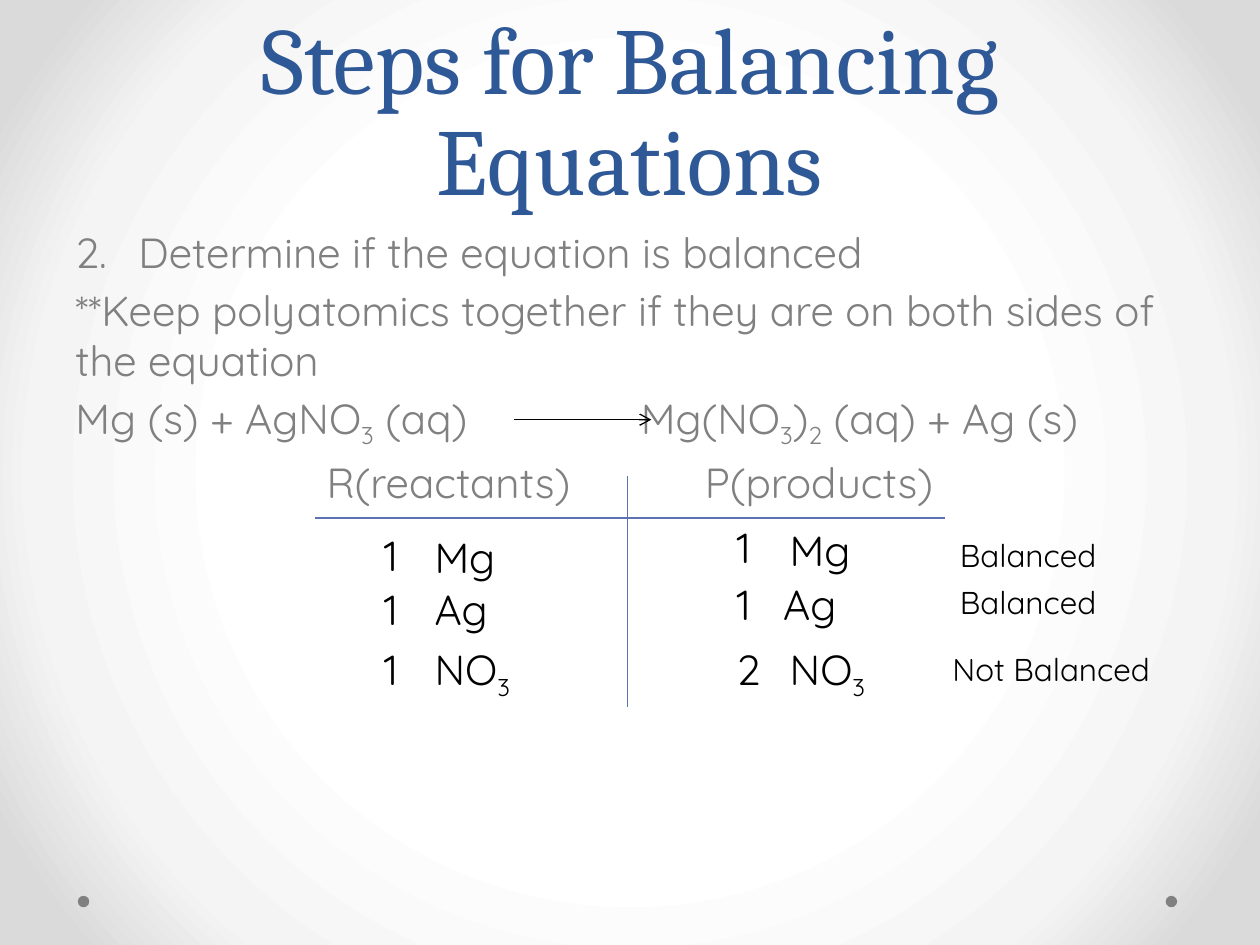
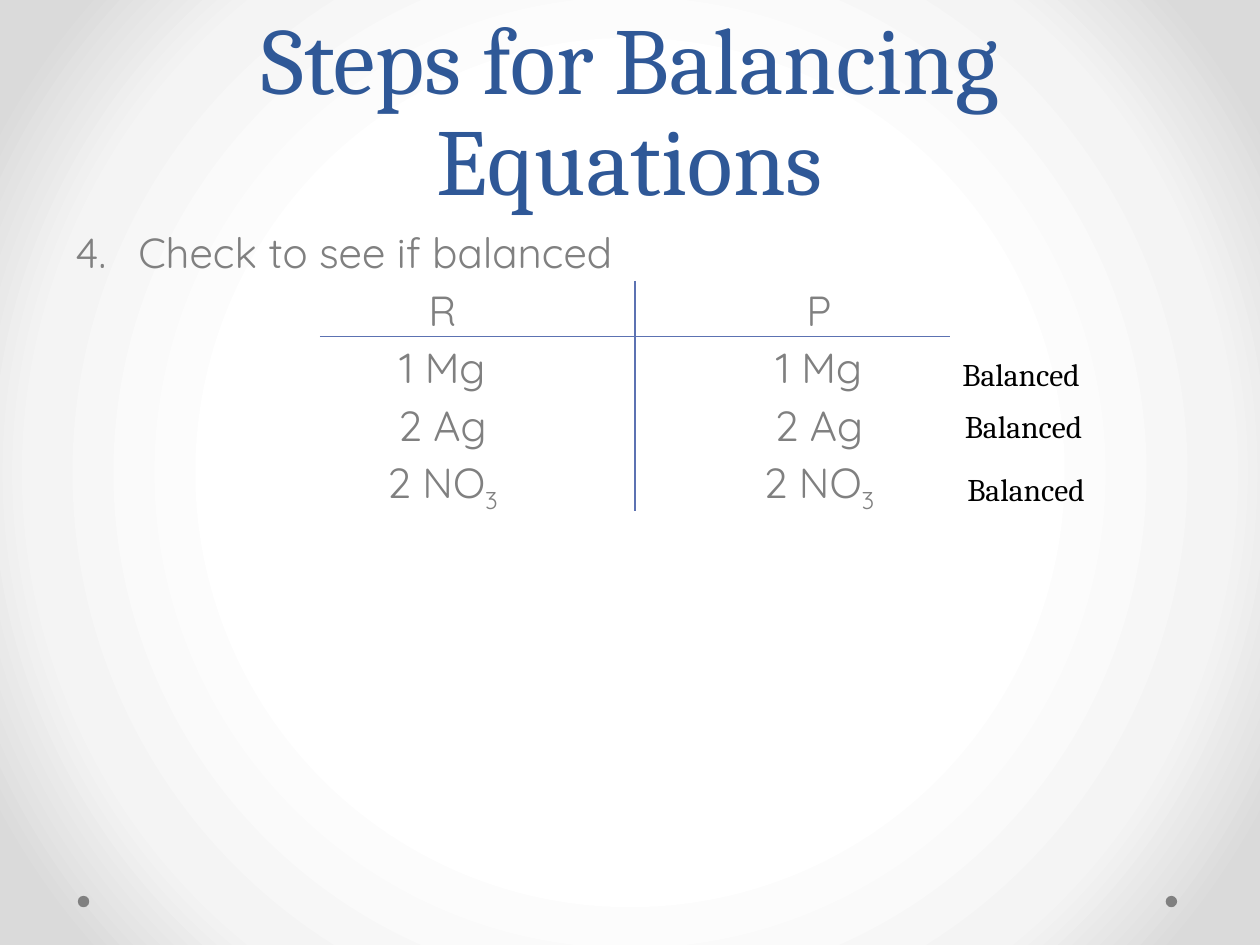
import dataclasses
import lxml.etree
import pptx
import pptx.dml.color
import pptx.enum.shapes
import pptx.enum.text
import pptx.oxml
import pptx.oxml.ns
import pptx.util

Cm = pptx.util.Cm
Pt = pptx.util.Pt
Align = pptx.enum.text.PP_ALIGN
Anchor = pptx.enum.text.MSO_ANCHOR


@dataclasses.dataclass(frozen=True)
class Theme:
    blue: str = "2F5897"
    rule: str = "5C72B2"
    gray: str = "808080"
    black: str = "000000"
    stops: tuple = ((50, "FFFFFF"), (76, "F4F4F4"), (92, "DADADA"))
    serif: str = "Cambria"
    sans: str = "Quicksand"
    big: int = 54
    text: int = 24
    note: int = 18
    thin: float = 0.75


look = Theme()

TITLE = "Steps for Balancing Equations"
DOTS = (1.57, 23.5)
DOT_TOP, DOT_SIZE = 18.06, 0.23
STEM, SPAN = 4.65, 12.7

SLIDES = [
    {
        "body": [
            ("Determine if the equation is balanced", {"start": 2}),
            ("**Keep polyatomics together if they are on both sides of the equation", {}),
            ("Mg (s) + AgNO~3~ (aq)\tMg(NO~3~)~2~ (aq) + Ag (s)", {"tabs": [("l", 11.4)]}),
            ("\tR(reactants)\tP(products)", {"tabs": [("ctr", 7.52), ("ctr", 14.99)]}),
        ],
        "cross": {"mid": 12.65, "top": 9.6, "left": 6.35, "bar": 10.44},
        "arrow": (10.36, 8.46, 13.13, 8.46),
        "marks": [
            (1.1, look.text, look.sans, [
                (7.49, 10.54, "1"), (7.49, 11.63, "1"), (7.49, 12.85, "1"),
                (14.6, 10.39, "1"), (14.6, 11.53, "1"), (14.6, 12.85, "2"),
            ]),
            (2.95, look.text, look.sans, [
                (8.51, 10.59, "Mg"), (8.51, 11.63, "Ag"), (8.51, 12.85, "NO~3~"),
                (15.67, 10.44, "Mg"), (15.54, 11.53, "Ag"), (15.67, 12.85, "NO~3~"),
            ]),
            (5.33, look.note, look.sans, [
                (19.1, 10.69, "Balanced"), (19.1, 11.63, "Balanced"),
                (18.95, 12.98, "Not Balanced"),
            ]),
        ],
    },
    {
        "body": [("Check to see if balanced", {"start": 4})] + [
            (f"\t{left}\t{right}", {"tabs": [("ctr", 7.4), ("ctr", 14.99)]})
            for left, right in (
                ("R", "P"), ("1 Mg", "1 Mg"), ("2 Ag", "2 Ag"), ("2 NO~3~", "2 NO~3~"),
            )
        ],
        "cross": {"mid": 12.8, "top": 5.66, "left": 6.45, "bar": 6.78},
        "arrow": None,
        "marks": [
            (4.24, look.note, look.serif, [
                (19.15, 7.04, "Balanced"), (19.2, 8.08, "Balanced"), (19.25, 9.35, "Balanced"),
            ]),
        ],
    },
]


def color(code):
    return pptx.dml.color.RGBColor.from_string(code)


def add(parent, tag, **attrs):
    node = lxml.etree.SubElement(parent, pptx.oxml.ns.qn(tag))
    for key, val in attrs.items():
        node.set(key, str(val))
    return node


def frame(slide, x, y, w, h, anchor=Anchor.TOP):
    box = slide.shapes.add_textbox(Cm(x), Cm(y), Cm(w), Cm(h))
    box.text_frame.word_wrap = True
    box.text_frame.vertical_anchor = anchor
    return box.text_frame


def write(area, text, size=look.text, face=look.sans, ink=look.black,
          align=Align.LEFT, lead=None, gap=0, start=None, tabs=()):
    para = area.paragraphs[0]
    if para.runs:
        para = area.add_paragraph()
    para.alignment = align
    para.space_before = Pt(gap)
    if lead:
        para.line_spacing = Pt(lead)
    props = para._p.get_or_add_pPr()
    if start:
        props.set("marL", str(Cm(1.27)))
        props.set("indent", str(-Cm(1.27)))
        add(props, "a:buFont", typeface="+mj-lt")
        add(props, "a:buAutoNum", type="arabicPeriod", startAt=start)
    if tabs:
        stops = add(props, "a:tabLst")
        for kind, pos in tabs:
            add(stops, "a:tab", pos=Cm(pos), algn=kind)
    for num, part in enumerate(text.split("~")):
        if not part:
            continue
        run = para.add_run()
        run.text = part
        run.font.size = Pt(size)
        run.font.name = face
        run.font.color.rgb = color(ink)
        if num % 2:
            run._r.get_or_add_rPr().set("baseline", "-25000")


def line(slide, x1, y1, x2, y2, ink=look.rule, arrow=False):
    rule = slide.shapes.add_connector(
        pptx.enum.shapes.MSO_CONNECTOR.STRAIGHT, Cm(x1), Cm(y1), Cm(x2), Cm(y2))
    rule.line.color.rgb = color(ink)
    rule.line.width = Pt(look.thin)
    if arrow:
        add(rule.line._get_or_add_ln(), "a:tailEnd", type="arrow")
    add(rule._element.spPr, "a:effectLst")


def paint(master):
    master.background.fill.solid()
    props = master._element.xpath("p:cSld/p:bg/p:bgPr")[0]
    props.remove(props[0])
    grad = add(props, "a:gradFill", rotWithShape=1)
    props.insert(0, grad)
    stops = add(grad, "a:gsLst")
    for pos, code in look.stops:
        add(add(stops, "a:gs", pos=pos * 1000), "a:srgbClr", val=code)
    ring = add(grad, "a:path")
    ring.set("path", "circle")
    add(ring, "a:fillToRect", l=50000, t=50000, r=50000, b=50000)


def base(slide):
    for x in DOTS:
        dot = slide.shapes.add_shape(
            pptx.enum.shapes.MSO_SHAPE.OVAL, Cm(x), Cm(DOT_TOP), Cm(DOT_SIZE), Cm(DOT_SIZE))
        dot.shadow.inherit = False
        dot.fill.solid()
        dot.fill.fore_color.rgb = color(look.gray)
        dot.line.fill.background()
    head = frame(slide, 1.27, 0, 22.86, 4.45, Anchor.BOTTOM)
    write(head, TITLE, size=look.big, face=look.serif, ink=look.blue,
          align=Align.CENTER, lead=58)


def build(slide, data):
    base(slide)
    body = frame(slide, 1.27, 4.45, 22.86, 12.57)
    for num, (text, form) in enumerate(data["body"]):
        write(body, text, ink=look.gray, gap=4 if num else 0, **form)
    cross = data["cross"]
    line(slide, cross["mid"], cross["top"], cross["mid"], cross["top"] + STEM)
    line(slide, cross["left"], cross["bar"], cross["left"] + SPAN, cross["bar"])
    if data["arrow"]:
        line(slide, *data["arrow"], ink=look.black, arrow=True)
    for width, size, face, marks in data["marks"]:
        for x, y, text in marks:
            write(frame(slide, x, y, width, size * 0.05), text, size=size, face=face)


def main():
    deck = pptx.Presentation()
    deck.slide_width, deck.slide_height = Cm(25.4), Cm(19.05)
    paint(deck.slide_master)
    for data in SLIDES:
        build(deck.slides.add_slide(deck.slide_layouts[6]), data)
    deck.save("out.pptx")


if __name__ == "__main__":
    main()
